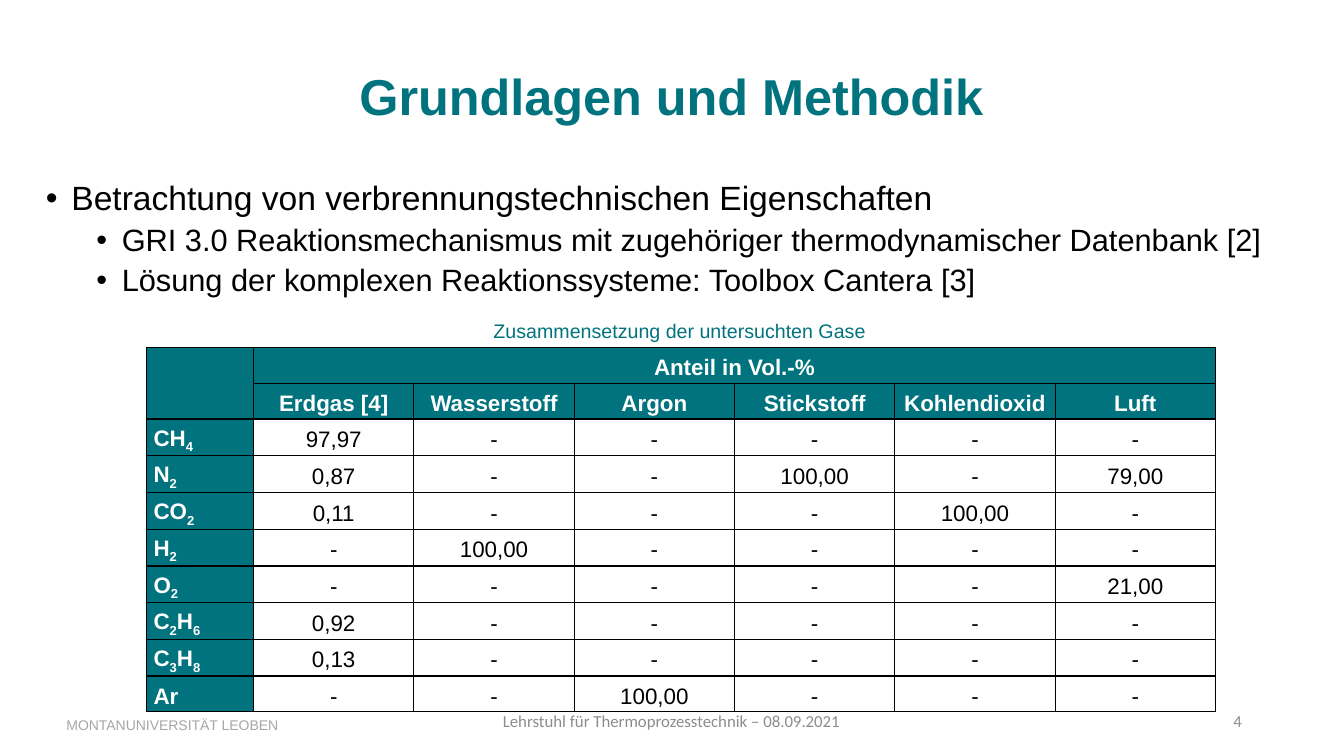
from dataclasses import dataclass

from lxml import etree
from pptx import Presentation
from pptx.dml.color import RGBColor
from pptx.enum.text import MSO_ANCHOR, PP_ALIGN
from pptx.oxml.ns import qn
from pptx.slide import Slide
from pptx.table import _Cell
from pptx.text.text import TextFrame, _Paragraph
from pptx.util import Cm, Pt

TEAL = RGBColor(0x00, 0x73, 0x7E)
BLACK = RGBColor(0x00, 0x00, 0x00)
WHITE = RGBColor(0xFF, 0xFF, 0xFF)
FOOTER_GRAY = RGBColor(0x8C, 0x8C, 0x8C)
LIGHT_GRAY = RGBColor(0xA6, 0xA6, 0xA6)

LEFT, CENTER = PP_ALIGN.LEFT, PP_ALIGN.CENTER
RIGHT, JUSTIFY = PP_ALIGN.RIGHT, PP_ALIGN.JUSTIFY
TOP, MIDDLE = MSO_ANCHOR.TOP, MSO_ANCHOR.MIDDLE

ROW_HEIGHT = Cm(0.9)
LABEL_WIDTH, GAS_WIDTH = Cm(2.7), Cm(4.04)
CELL_MARGIN = Cm(0.18)
SUBSCRIPT = "-25000"


@dataclass(frozen=True)
class Label:
    """A single-line text box, placed in centimetres."""
    text: str
    left: float
    top: float
    width: float
    height: float
    size: float
    color: RGBColor
    align: PP_ALIGN = CENTER
    anchor: MSO_ANCHOR = MIDDLE
    font: str = "Arial"
    bold: bool = False
    line_spacing: float = 1.0


@dataclass(frozen=True)
class Bullet:
    text: str
    size: float
    level: int
    space_before: float


@dataclass(frozen=True)
class Component:
    """A table row: formula and its share in each gas that contains it."""
    formula: str
    shares: dict[str, str]


LABELS = [
    Label("MONTANUNIVERSITÄT LEOBEN", 1.22, 17.93, 6.04, 0.69, 10, LIGHT_GRAY, RIGHT, TOP),
    Label("Grundlagen und Methodik", 0.91, 1.02, 32.03, 2.95, 36, TEAL, bold=True,
          line_spacing=0.9),
    Label("Lehrstuhl für Thermoprozesstechnik – 08.09.2021", 11.91, 17.65, 10.03, 1.02,
          12, FOOTER_GRAY, font="Calibri"),
    Label("Zusammensetzung der untersuchten Gase", 5.18, 7.9, 23.9, 0.86, 14, TEAL, anchor=TOP),
    Label("4", 23.93, 17.65, 7.62, 1.02, 12, FOOTER_GRAY, RIGHT, font="Calibri"),
]

BULLETS = [
    Bullet("Betrachtung von verbrennungstechnischen Eigenschaften", 24, 0, 0),
    Bullet("GRI 3.0 Reaktionsmechanismus mit zugehöriger thermodynamischer Datenbank [2]",
           22, 1, 5),
    Bullet("Lösung der komplexen Reaktionssysteme: Toolbox Cantera [3]", 22, 1, 5),
]

GASES = ["Erdgas [4]", "Wasserstoff", "Argon", "Stickstoff", "Kohlendioxid", "Luft"]
COMPONENTS = [
    Component("CH4", {"Erdgas [4]": "97,97"}),
    Component("N2", {"Erdgas [4]": "0,87", "Stickstoff": "100,00", "Luft": "79,00"}),
    Component("CO2", {"Erdgas [4]": "0,11", "Kohlendioxid": "100,00"}),
    Component("H2", {"Wasserstoff": "100,00"}),
    Component("O2", {"Luft": "21,00"}),
    Component("C2H6", {"Erdgas [4]": "0,92"}),
    Component("C3H8", {"Erdgas [4]": "0,13"}),
    Component("Ar", {"Argon": "100,00"}),
]


def write(paragraph: _Paragraph, text: str, *, size: float, color: RGBColor,
          align: PP_ALIGN = LEFT, font: str = "Arial", bold: bool = False,
          line_spacing: float = 1.0, space_before: float = 0, formula: bool = False) -> None:
    """Fill a paragraph; in a formula every digit becomes a subscript."""
    paragraph.alignment = align
    paragraph.line_spacing = line_spacing
    paragraph.space_before = Pt(space_before)
    for part in text if formula else [text]:
        run = paragraph.add_run()
        run.text = part
        run.font.size = Pt(size)
        run.font.name = font
        run.font.bold = bold
        run.font.color.rgb = color
        if formula and part.isdigit():
            run._r.get_or_add_rPr().set("baseline", SUBSCRIPT)


def add_text_frame(slide: Slide, left: float, top: float, width: float, height: float,
                   anchor: MSO_ANCHOR = TOP) -> TextFrame:
    box = slide.shapes.add_textbox(Cm(left), Cm(top), Cm(width), Cm(height))
    box.text_frame.word_wrap = True
    box.text_frame.vertical_anchor = anchor
    return box.text_frame


def add_label(slide: Slide, label: Label) -> None:
    frame = add_text_frame(slide, label.left, label.top, label.width, label.height, label.anchor)
    write(frame.paragraphs[0], label.text, size=label.size, color=label.color,
          align=label.align, font=label.font, bold=label.bold, line_spacing=label.line_spacing)


def add_bullets(slide: Slide, bullets: list[Bullet]) -> None:
    frame = add_text_frame(slide, 0.91, 4.45, 32.03, 12.73)
    for index, bullet in enumerate(bullets):
        paragraph = frame.add_paragraph() if index else frame.paragraphs[0]
        paragraph.level = bullet.level
        write(paragraph, bullet.text, size=bullet.size, color=BLACK, line_spacing=0.9,
              space_before=bullet.space_before)
        properties = paragraph._p.get_or_add_pPr()
        properties.set("marL", str(Cm(0.64 + 1.27 * bullet.level)))
        properties.set("indent", str(-Cm(0.64)))
        etree.SubElement(properties, qn("a:buFont"), typeface="Arial")
        etree.SubElement(properties, qn("a:buChar"), char="•")


def format_cell(cell: _Cell, header: bool) -> None:
    """Set margins, black borders and the header or body fill."""
    cell.vertical_anchor = MIDDLE
    cell.margin_left = cell.margin_right = CELL_MARGIN
    cell.margin_top = cell.margin_bottom = 0
    properties = cell._tc.get_or_add_tcPr()
    for side in ("a:lnL", "a:lnR", "a:lnT", "a:lnB"):
        line = etree.SubElement(properties, qn(side), w=str(Pt(1)))
        fill = etree.SubElement(line, qn("a:solidFill"))
        etree.SubElement(fill, qn("a:srgbClr"), val=str(BLACK))
    if header:
        cell.fill.solid()
        cell.fill.fore_color.rgb = TEAL
    else:
        cell.fill.background()


def add_gas_table(slide: Slide) -> None:
    rows = [["", "Anteil in Vol.-%"] + [""] * (len(GASES) - 1), ["", *GASES]]
    for component in COMPONENTS:
        rows.append([component.formula, *(component.shares.get(gas, "-") for gas in GASES)])

    table = slide.shapes.add_table(
        len(rows), len(rows[0]), Cm(3.69), Cm(8.76),
        LABEL_WIDTH + GAS_WIDTH * len(GASES), ROW_HEIGHT * len(rows)).table
    for index, column in enumerate(table.columns):
        column.width = GAS_WIDTH if index else LABEL_WIDTH
    for row in table.rows:
        row.height = ROW_HEIGHT

    for row_index, texts in enumerate(rows):
        for column_index, text in enumerate(texts):
            cell = table.cell(row_index, column_index)
            is_label = column_index == 0
            header = row_index < 2 or is_label
            format_cell(cell, header)
            write(cell.text_frame.paragraphs[0], text, size=16, bold=header,
                  color=WHITE if header else BLACK, align=JUSTIFY if is_label else CENTER,
                  line_spacing=1.2, formula=is_label and bool(text))
    table.cell(0, 0).merge(table.cell(1, 0))
    table.cell(0, 1).merge(table.cell(0, len(GASES)))


def main() -> None:
    presentation = Presentation()
    presentation.slide_width, presentation.slide_height = Cm(33.87), Cm(19.05)
    slide = presentation.slides.add_slide(presentation.slide_layouts[6])

    # Title, caption and footer
    for label in LABELS:
        add_label(slide, label)
    # Key points
    add_bullets(slide, BULLETS)
    # Gas compositions
    add_gas_table(slide)

    presentation.save("out.pptx")


if __name__ == "__main__":
    main()
